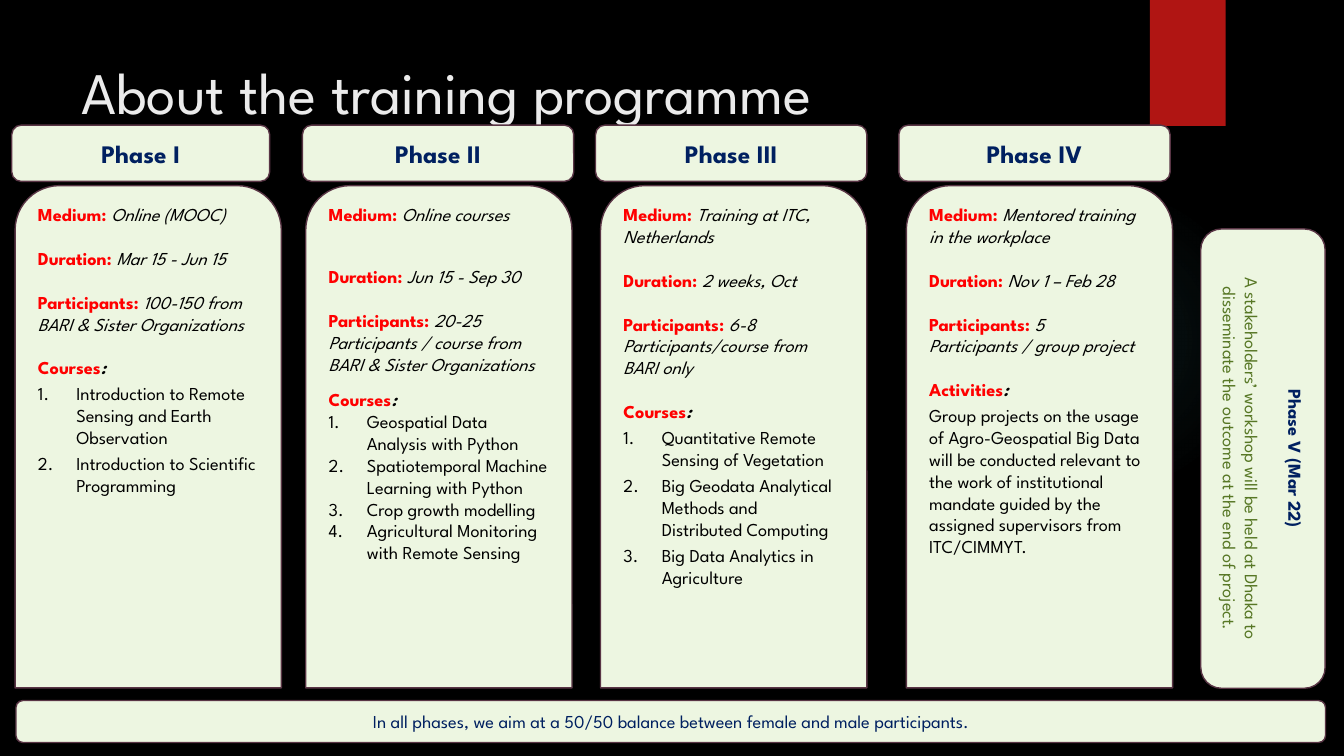
import pptx
import pptx.util
import pptx.dml.color
import pptx.enum.shapes
import pptx.enum.text
import pptx.oxml

SHAPE = pptx.enum.shapes.MSO_SHAPE
ANCHOR = pptx.enum.text.MSO_ANCHOR
ALIGN = pptx.enum.text.PP_ALIGN
NS = 'xmlns:a="http://schemas.openxmlformats.org/drawingml/2006/main"'
BLACK, RED, NAVY, GREEN = "000000", "FF0000", "002060", "577725"
GAP, TIGHT = 15.6, 9.6  # points between the sections of a card


def color(code):
    return pptx.dml.color.RGBColor.from_string(code)


def text(frame, *runs, size=13, ink=BLACK, bold=False, italic=False,
         align=ALIGN.LEFT, before=0, number=False):
    """Add one paragraph; a run is a string or (string, own format)."""
    para = frame.paragraphs[0]
    if para.runs:
        para = frame.add_paragraph()
    para.alignment = align
    para.space_before = pptx.util.Pt(before)
    if number:
        props = para._p.get_or_add_pPr()
        hang = pptx.util.Inches(0.38)
        props.set("marL", str(hang))
        props.set("indent", str(-hang))
        props.append(pptx.oxml.parse_xml(f'<a:buAutoNum {NS} type="arabicPeriod"/>'))
    for item in runs:
        words, own = (item, {}) if isinstance(item, str) else item
        look = {"ink": ink, "bold": bold, "italic": italic, **own}
        for row, line in enumerate(words.split("\v")):
            if row:
                para.add_line_break()
            run = para.add_run()
            run.text = line
            font = run.font
            font.name = "League Spartan"
            font.size = pptx.util.Pt(size)
            font.bold, font.italic = look["bold"], look["italic"]
            font.color.rgb = color(look["ink"])


class Deck:
    """Style and current slide; lengths are cells of a 160 by 90 grid."""
    paper, edge = "EDF6E1", "593545"

    def __init__(self):
        self.file = pptx.Presentation()
        self.file.slide_width = pptx.util.Inches(13.33)
        self.file.slide_height = pptx.util.Inches(7.5)
        self.slide = self.file.slides.add_slide(self.file.slide_layouts[6])
        back = self.slide.background.fill
        back.solid()
        back.fore_color.rgb = color(BLACK)

    def place(self, left, top, width, height):
        col, row = self.file.slide_width / 160, self.file.slide_height / 90
        return [round(n) for n in (left * col, top * row, width * col, height * row)]

    def shape(self, kind, *area, fill=None, line=None):
        form = self.slide.shapes.add_shape(kind, *self.place(*area))
        form.shadow.inherit = False
        form.fill.solid()
        form.fill.fore_color.rgb = color(fill or self.paper)
        if line:
            form.line.color.rgb = color(line)
            form.line.width = pptx.util.Pt(1)
        else:
            form.line.fill.background()
        return form

    def glow(self, *area):
        form = self.shape(SHAPE.OVAL, *area)
        stops = "".join(
            f'<a:gs pos="{spot}000"><a:srgbClr val="50B9C1">'
            f'<a:alpha val="{alpha}000"/></a:srgbClr></a:gs>'
            for spot, alpha in ((0, 7), (36, 6), (69, 0)))
        grad = pptx.oxml.parse_xml(
            f'<a:gradFill {NS}><a:gsLst>{stops}</a:gsLst><a:path path="circle">'
            '<a:fillToRect l="50000" t="50000" r="50000" b="50000"/>'
            '</a:path></a:gradFill>')
        solid = form.fill._xPr.solidFill if hasattr(form.fill._xPr, "solidFill") \
            else form.fill._xPr.eg_fillProperties
        form.fill._xPr.replace(solid, grad)

    def title(self, words, *area):
        frame = self.slide.shapes.add_textbox(*self.place(*area)).text_frame
        frame.word_wrap = True
        text(frame, words, size=42, ink="EBEBEB")

    def panel(self, *area, kind=SHAPE.ROUNDED_RECTANGLE, anchor=ANCHOR.MIDDLE, turn=0):
        """Add a pale outlined box and return its text frame."""
        form = self.shape(kind, *area, line=self.edge)
        form.rotation = turn
        frame = form.text_frame
        frame.word_wrap = True
        frame.vertical_anchor = anchor
        return frame

    def card(self, left, facts, head, items, gaps, step, number):
        frame = self.panel(left, 22.1, 31.7, 59.8, anchor=ANCHOR.TOP,
                           kind=SHAPE.ROUND_2_SAME_RECTANGLE)
        label = {"ink": RED, "bold": True}
        for name, fact, gap in zip(("Medium", "Duration", "Participants"), facts, (0, *gaps)):
            text(frame, (name + ": ", label), (fact, {"italic": True}), before=gap)
        text(frame, (head, label), (":", {"bold": True, "italic": True}), before=gaps[-1])
        for item in items:
            text(frame, item, before=step, number=number)


EVEN = (GAP, GAP, GAP)
PHASES = [
    # name, header left and width, card left, facts, heading, items, gaps, step, numbered
    ("Phase I", 1.4, 30.7, 1.8,
     ("Online (MOOC)", "Mar 15 - Jun 15", "100-150 from BARI & Sister Organizations"),
     "Courses",
     ("Introduction to Remote Sensing and Earth Observation",
      "Introduction to Scientific Programming"), EVEN, 3, True),
    ("Phase II", 36, 32.3, 36.4,
     ("Online courses", "Jun 15 - Sep 30",
      "20-25 Participants / course from BARI & Sister Organizations"),
     "Courses",
     ("Geospatial Data Analysis with Python",
      "Spatiotemporal Machine Learning with Python",
      "Crop growth modelling",
      "Agricultural Monitoring with Remote Sensing"), (3 * TIGHT, GAP, TIGHT), 0, True),
    ("Phase III", 70.9, 32.3, 71.5,
     ("Training at ITC, Netherlands", "2 weeks, Oct", "6-8 Participants/course from BARI only"),
     "Courses",
     ("Quantitative Remote Sensing of Vegetation",
      "Big Geodata Analytical Methods and\vDistributed Computing",
      "Big Data Analytics in Agriculture"), EVEN, 3, True),
    ("Phase IV", 107, 32.3, 107.9,
     ("Mentored training in the workplace", "Nov 1 – Feb 28", "5 Participants / group project"),
     "Activities",
     ("Group projects on the usage of Agro-Geospatial Big Data will be conducted "
      "relevant to the work of institutional mandate guided by the assigned "
      "supervisors from ITC/CIMMYT.",), EVEN, 3, False),
]


def main():
    deck = Deck()
    deck.glow(112.9, 22, 37, 37)
    deck.shape(SHAPE.RECTANGLE, 136.9, 0, 9, 15, fill="B01513")
    deck.title("About the training programme", 8.5, 6, 123.5, 18.4)

    for name, left, width, *rest in PHASES:
        text(deck.panel(left, 14.9, width, 6.7), name,
             size=18, ink=NAVY, bold=True, align=ALIGN.CENTER)
        deck.card(*rest)

    last = deck.panel(123, 47.2, 54.7, 14.8, turn=90)
    text(last, "Phase V (Mar 22)", ink=NAVY, bold=True, align=ALIGN.CENTER)
    text(last, "A stakeholders’ workshop will be held at Dhaka to disseminate "
         "the outcome at the end of project.", ink=GREEN, align=ALIGN.CENTER, before=GAP)

    text(deck.panel(1.9, 83.4, 155.9, 5),
         "In all phases, we aim at a 50/50 balance between female and male participants.",
         ink=NAVY, align=ALIGN.CENTER)
    deck.file.save("out.pptx")


if __name__ == "__main__":
    main()
